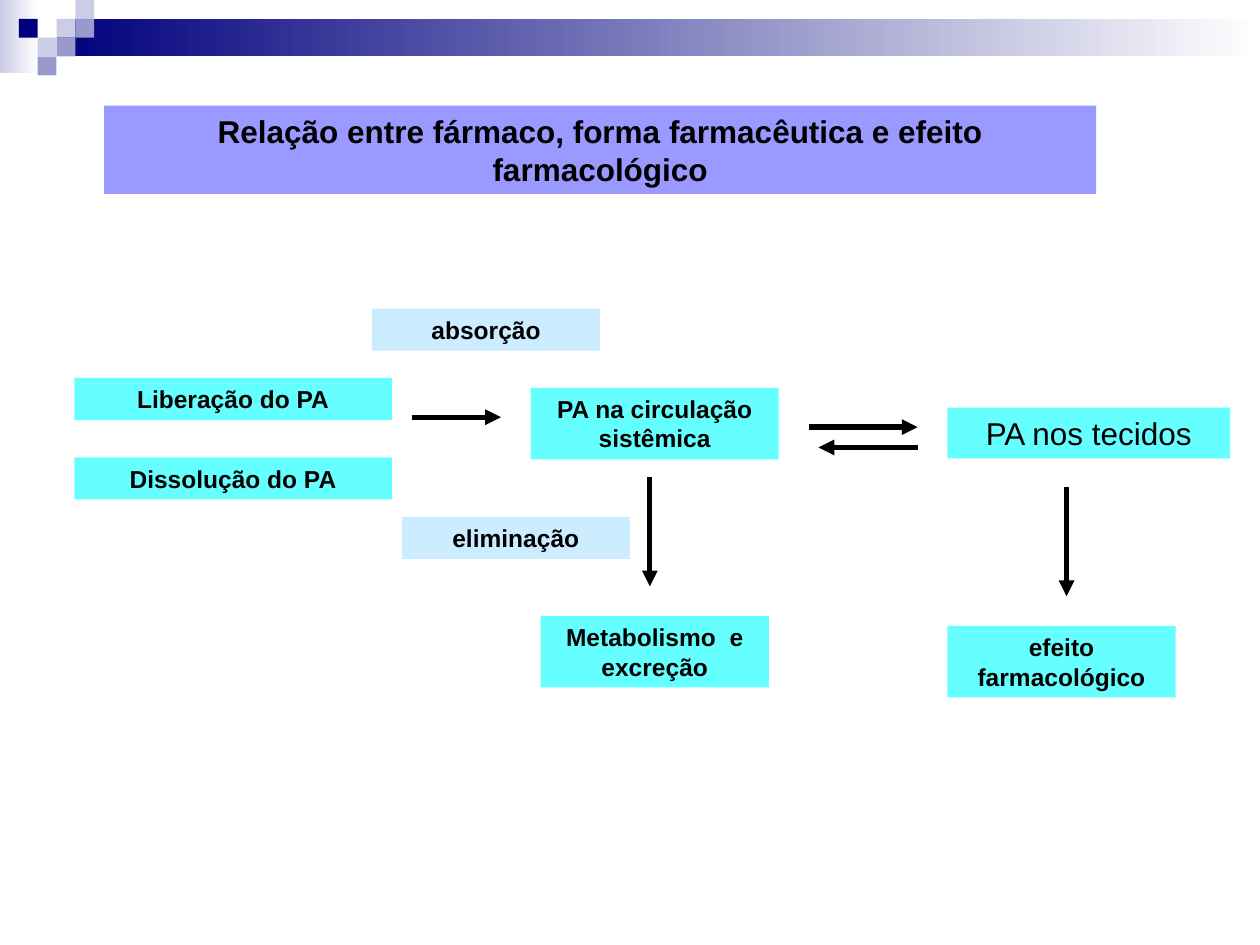
"""Build a slide on how drug, dosage form and effect relate."""
import pptx
import pptx.util
import pptx.dml.color
import pptx.enum.shapes
import pptx.enum.text
import pptx.oxml
import pptx.oxml.ns

Cm = pptx.util.Cm
NAVY, LILAC, PALE, WHITE = "00007D", "9999CC", "CCCCE6", "FFFFFF"
AQUA, SKY, VIOLET, BLACK = "66FFFF", "CCECFF", "9999FF", "000000"

TILE = 0.38
FADES = [
    ((0, 0, 0.79, 1.47), PALE),
    ((3 * TILE, TILE, 24.26, 2 * TILE), NAVY),
]
TILES = [
    (3, 1, PALE), (4, 0, PALE), (4, 1, LILAC), (2, 2, PALE),
    (1, 1, NAVY), (3, 2, LILAC), (2, 3, LILAC),
]

ONE, TWO = 0.85, 1.44
BOXES = [
    ("Liberação do PA", (1.5, 7.62, 6.4, ONE), AQUA, 14, True),
    ("Dissolução do PA", (1.5, 9.22, 6.4, ONE), AQUA, 14, True),
    ("PA na circulação sistêmica", (10.7, 7.82, 5, TWO), AQUA, 14, True),
    ("Metabolismo  e excreção", (10.9, 12.42, 4.6, TWO), AQUA, 14, True),
    ("PA nos tecidos", (19.1, 8.22, 5.7, 1.02), AQUA, 18, False),
    ("absorção", (7.5, 6.22, 4.6, ONE), SKY, 14, True),
    ("eliminação", (8.1, 10.42, 4.6, ONE), SKY, 14, True),
    ("efeito farmacológico", (19.1, 12.62, 4.6, TWO), AQUA, 14, True),
    ("Relação entre fármaco, forma farmacêutica e efeito farmacológico",
     (2.1, 2.13, 20, 1.78), VIOLET, 18, True),
]
ARROWS = [
    (8.3, 8.41, 10.1, 8.41),
    (16.3, 8.61, 18.5, 8.61),
    (13.1, 9.62, 13.1, 11.82),
    (21.5, 9.82, 21.5, 12.02),
    (18.5, 9.02, 16.5, 9.02),
]


def tint(code):
    return pptx.dml.color.RGBColor.from_string(code)


def block(slide, place, color):
    kind = pptx.enum.shapes.MSO_SHAPE.RECTANGLE
    shape = slide.shapes.add_shape(kind, *map(Cm, place))
    shape.shadow.inherit = False
    shape.line.fill.background()
    shape.fill.solid()
    shape.fill.fore_color.rgb = tint(color)
    return shape


def fade(slide, place, color):
    fill = block(slide, place, color).fill
    fill.gradient()
    fill.gradient_angle = 0
    for stop, (spot, code) in zip(fill.gradient_stops, [(0, color), (1, WHITE)]):
        stop.position = spot
        stop.color.rgb = tint(code)


def label(slide, text, place, color, size, bold):
    frame = block(slide, place, color).text_frame
    frame.text = text
    frame.word_wrap = True
    frame.auto_size = pptx.enum.text.MSO_AUTO_SIZE.SHAPE_TO_FIT_TEXT
    frame.vertical_anchor = pptx.enum.text.MSO_ANCHOR.TOP
    para = frame.paragraphs[0]
    para.alignment = pptx.enum.text.PP_ALIGN.CENTER
    font = para.font
    font.name, font.size, font.bold = "Arial", pptx.util.Pt(size), bold
    font.color.rgb = tint(BLACK)


def arrow(slide, ends):
    kind = pptx.enum.shapes.MSO_CONNECTOR.STRAIGHT
    link = slide.shapes.add_connector(kind, *map(Cm, ends))
    link.line.width = pptx.util.Pt(3)
    link.line.color.rgb = tint(BLACK)
    space = pptx.oxml.ns.nsdecls("a")
    tail = pptx.oxml.parse_xml(f'<a:tailEnd {space} type="triangle"/>')
    link.line._get_or_add_ln().append(tail)
    props = link._element.spPr
    props.append(pptx.oxml.parse_xml(f"<a:effectLst {space}/>"))


def main():
    deck = pptx.Presentation()
    deck.slide_width, deck.slide_height = Cm(25.4), Cm(19.05)
    slide = deck.slides.add_slide(deck.slide_layouts[6])
    for place, color in FADES:
        fade(slide, place, color)
    for col, row, color in TILES:
        block(slide, (col * TILE, row * TILE, TILE, TILE), color)
    for box in BOXES:
        label(slide, *box)
    for ends in ARROWS:
        arrow(slide, ends)
    deck.save("out.pptx")


if __name__ == "__main__":
    main()
